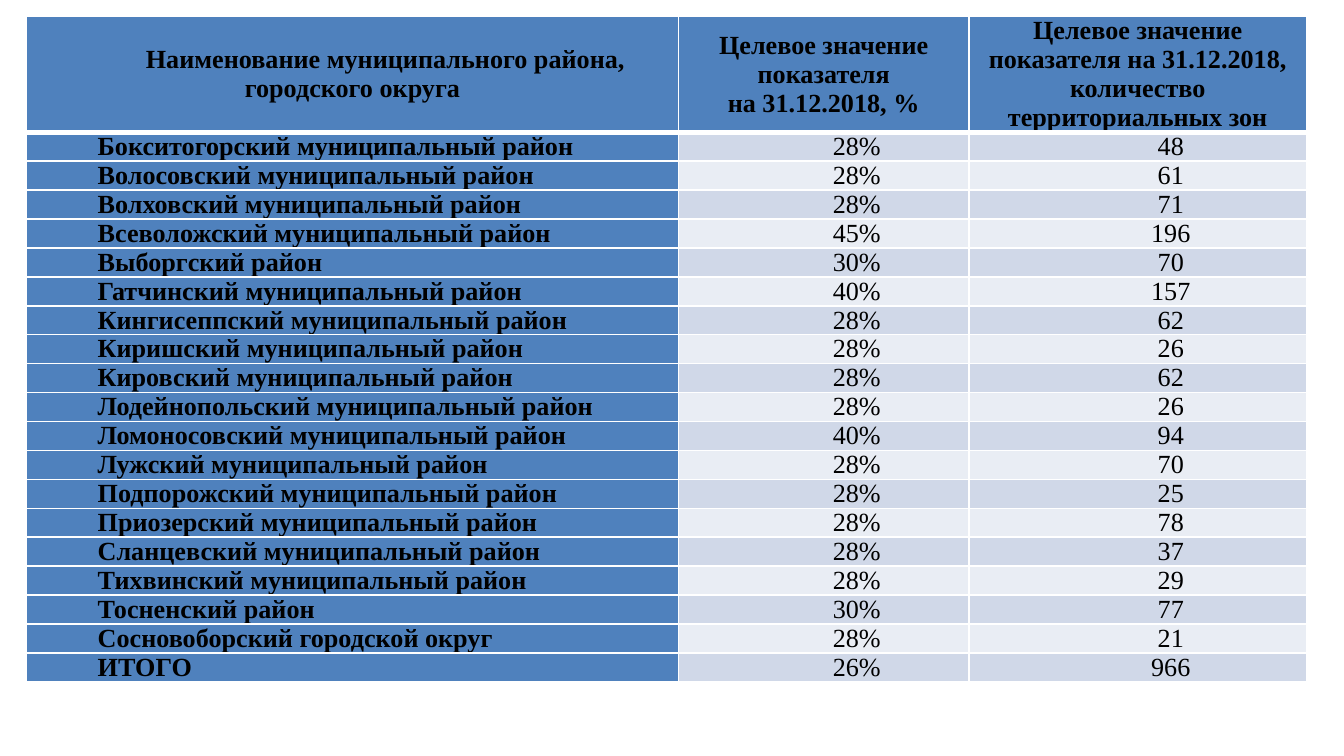
from dataclasses import dataclass

from lxml.etree import SubElement
from pptx import Presentation
from pptx.dml.color import RGBColor
from pptx.enum.text import MSO_ANCHOR, PP_ALIGN
from pptx.oxml.ns import qn
from pptx.slide import Slide
from pptx.util import Inches, Pt

SLIDE_WIDTH = Inches(10)
SLIDE_HEIGHT = SLIDE_WIDTH * 9 // 16

HEADINGS = (
    "Наименование муниципального района, городского округа",
    "Целевое значение показателя\nна 31.12.2018, %",
    "Целевое значение показателя на 31.12.2018, количество территориальных зон",
)
DISTRICTS = (
    ("Бокситогорский муниципальный район", "28%", "48"),
    ("Волосовский муниципальный район", "28%", "61"),
    ("Волховский муниципальный район", "28%", "71"),
    ("Всеволожский муниципальный район", "45%", "196"),
    ("Выборгский район", "30%", "70"),
    ("Гатчинский муниципальный район", "40%", "157"),
    ("Кингисеппский муниципальный район", "28%", "62"),
    ("Киришский муниципальный район", "28%", "26"),
    ("Кировский муниципальный район", "28%", "62"),
    ("Лодейнопольский муниципальный район", "28%", "26"),
    ("Ломоносовский муниципальный район", "40%", "94"),
    ("Лужский муниципальный район", "28%", "70"),
    ("Подпорожский муниципальный район", "28%", "25"),
    ("Приозерский муниципальный район", "28%", "78"),
    ("Сланцевский муниципальный район", "28%", "37"),
    ("Тихвинский муниципальный район", "28%", "29"),
    ("Тосненский район", "30%", "77"),
    ("Сосновоборский городской округ", "28%", "21"),
    ("ИТОГО ", "26%", "966"),
)
SHORT_ROWS = (5, 12, 17, 18, 19)


def color(value):
    return RGBColor.from_string(value)


def across(share):
    return round(SLIDE_WIDTH * share / 100)


def down(share):
    return round(SLIDE_HEIGHT * share / 100)


@dataclass
class TargetSlide:
    slide: Slide
    font: str = "Times New Roman"
    size: int = 14
    ink: str = "000000"
    accent: str = "4F81BD"
    bands: tuple = ("D0D8E8", "E9EDF4")
    grid: str = "FFFFFF"
    indent: float = 0.49

    def table(self, records, left, top, height, columns, rows):
        frame = self.slide.shapes.add_table(
            len(records), len(columns), across(left), down(top),
            across(sum(columns)), down(height),
        )
        table = frame.table
        table.first_row = table.horz_banding = False
        for column, share in zip(table.columns, columns):
            column.width = across(share)
        for row_number, (record, share) in enumerate(zip(records, rows)):
            table.rows[row_number].height = down(share)
            for column_number, wording in enumerate(record):
                cell = table.cell(row_number, column_number)
                self.borders(cell, row_number)
                self.fill(cell, row_number, column_number)
                self.wording(cell, wording, row_number, column_number)
        frame.height = down(height)

    def borders(self, cell, row_number):
        heavy = {0: "lnB", 1: "lnT"}.get(row_number)
        properties = cell._tc.get_or_add_tcPr()
        for side in ("lnL", "lnR", "lnT", "lnB"):
            width = Pt(3 if side == heavy else 1)
            edge = SubElement(properties, qn(f"a:{side}"), w=str(width))
            paint = SubElement(edge, qn("a:solidFill"))
            SubElement(paint, qn("a:srgbClr"), val=self.grid)

    def fill(self, cell, row_number, column_number):
        is_label = row_number == 0 or column_number == 0
        cell.fill.solid()
        cell.fill.fore_color.rgb = color(
            self.accent if is_label else self.bands[(row_number - 1) % 2]
        )

    def wording(self, cell, wording, row_number, column_number):
        is_header, is_name = row_number == 0, column_number == 0
        is_count = not is_header and column_number == 2
        cell.margin_left = cell.margin_right = Inches(0.04)
        cell.margin_top = cell.margin_bottom = 0
        cell.vertical_anchor = MSO_ANCHOR.BOTTOM if is_count else MSO_ANCHOR.MIDDLE
        paragraph = cell.text_frame.paragraphs[0]
        paragraph.text = wording
        paragraph.alignment = (
            PP_ALIGN.LEFT if is_name and not is_header else PP_ALIGN.CENTER
        )
        if is_name or not is_header:
            properties = paragraph._p.get_or_add_pPr()
            properties.set("marL", "0")
            properties.set("indent", str(Inches(self.indent)))
        for run in paragraph.runs:
            run.font.name = self.font
            run.font.size = Pt(self.size)
            run.font.bold = is_header or is_name
            run.font.color.rgb = color(self.ink)


def main():
    presentation = Presentation()
    presentation.slide_width = SLIDE_WIDTH
    presentation.slide_height = SLIDE_HEIGHT
    targets = TargetSlide(presentation.slides.add_slide(presentation.slide_layouts[6]))
    body_rows = (
        2.31 if number in SHORT_ROWS else 3.56
        for number in range(1, len(DISTRICTS) + 1)
    )
    targets.table(
        (HEADINGS, *DISTRICTS), left=1.97, top=2.18, height=95.47,
        columns=(48.53, 21.6, 25.13), rows=(12.62, *body_rows),
    )
    presentation.save("out.pptx")


if __name__ == "__main__":
    main()
